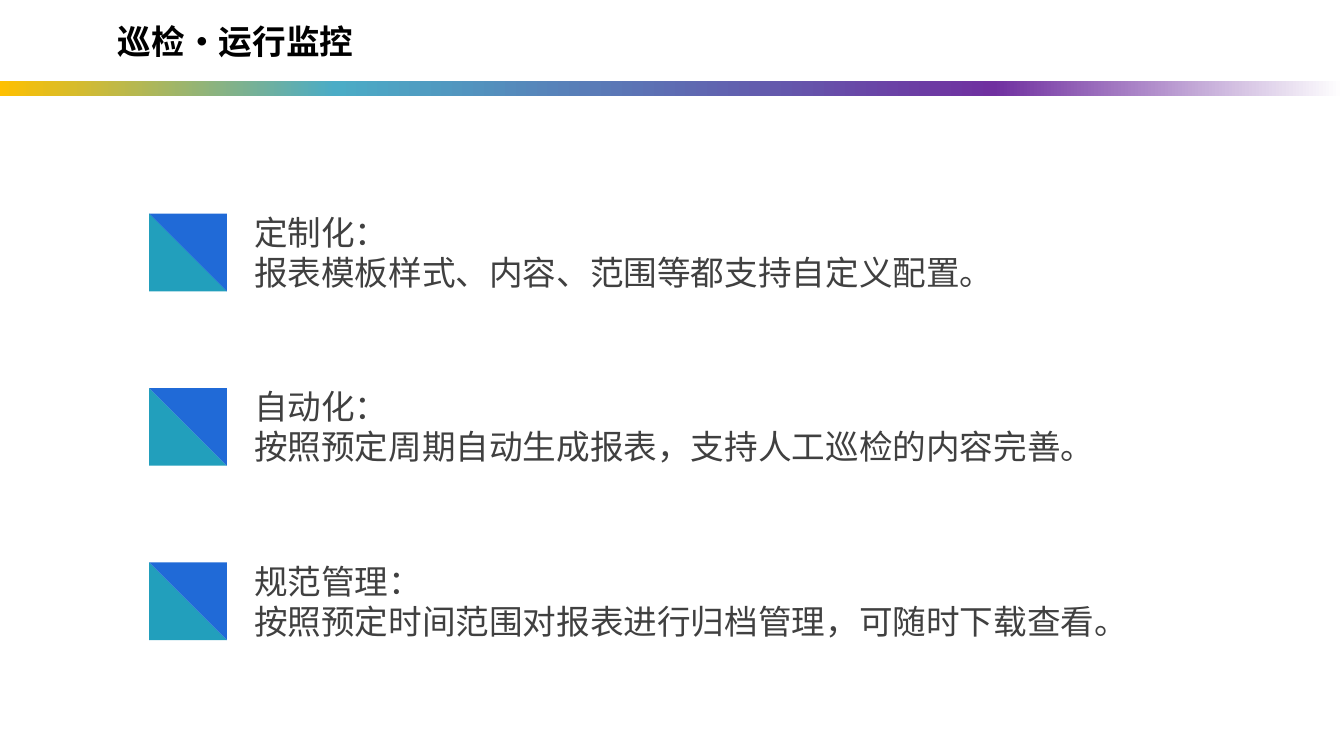
import pptx
import pptx.util
import pptx.dml.color
import pptx.enum.shapes
import pptx.enum.text
import pptx.oxml
import pptx.oxml.ns

Inches = pptx.util.Inches
RGBColor = pptx.dml.color.RGBColor
SHAPE = pptx.enum.shapes.MSO_SHAPE
ANCHOR = pptx.enum.text.MSO_ANCHOR

BLACK = RGBColor(0x00, 0x00, 0x00)
GREY = RGBColor(0x40, 0x40, 0x40)
TEAL = RGBColor(0x22, 0x9F, 0xBC)
BLUE = RGBColor(0x20, 0x6A, 0xD7)
GOLD = RGBColor(0xFF, 0xC0, 0x00)
AQUA = RGBColor(0x4B, 0xAC, 0xC6)
PURPLE = RGBColor(0x70, 0x30, 0xA0)
WHITE = RGBColor(0xFF, 0xFF, 0xFF)

BAR_STOPS = [(0, GOLD), (25, AQUA), (74, PURPLE), (100, WHITE)]
FEATURES = [
    ("定制化：", "报表模板样式、内容、范围等都支持自定义配置。"),
    ("自动化：", "按照预定周期自动生成报表，支持人工巡检的内容完善。"),
    ("规范管理：", "按照预定时间范围对报表进行归档管理，可随时下载查看。"),
]
FIRST_TOP = 2.12
PITCH = 1.73


class FeatureSlide:
    font = "Noto Sans CJK SC"
    size = pptx.util.Pt(24)

    def __init__(self, prs):
        self.slide = prs.slides.add_slide(prs.slide_layouts[5])

    def run(self, p, text, color, bold=False):
        r = p.add_run()
        r.text = text
        r.font.size = self.size
        r.font.bold = bold
        r.font.name = self.font
        r.font.color.rgb = color
        ea = pptx.oxml.parse_xml(
            f'<a:ea {pptx.oxml.ns.nsdecls("a")} typeface="{self.font}"/>')
        r.font._element.find(pptx.oxml.ns.qn("a:latin")).addnext(ea)

    def title(self, text):
        sp = self.slide.shapes.title
        sp.left, sp.top = Inches(1.07), Inches(0.16)
        sp.width, sp.height = Inches(9.62), Inches(0.5)
        tf = sp.text_frame
        tf.word_wrap = True
        tf.auto_size = pptx.enum.text.MSO_AUTO_SIZE.SHAPE_TO_FIT_TEXT
        tf.vertical_anchor = ANCHOR.TOP
        p = tf.paragraphs[0]
        p.alignment = pptx.enum.text.PP_ALIGN.LEFT
        self.run(p, text, BLACK, bold=True)

    def shape(self, shapes, kind, left, top, width, height):
        sp = shapes.add_shape(kind, Inches(left), Inches(top),
                              Inches(width), Inches(height))
        sp.shadow.inherit = False
        sp.line.fill.background()
        return sp

    def bar(self, stops):
        sp = self.shape(self.slide.shapes, SHAPE.RECTANGLE, -0.01, 0.8, 13.33, 0.15)
        sp.fill.gradient()
        sp.fill.gradient_angle = 0
        gs_list = sp._element.spPr.find(".//" + pptx.oxml.ns.qn("a:gsLst"))
        for gs in list(gs_list):
            gs_list.remove(gs)
        for percent, color in stops:
            gs_list.append(pptx.oxml.parse_xml(
                f'<a:gs {pptx.oxml.ns.nsdecls("a")} pos="{percent * 1000}">'
                f'<a:srgbClr val="{color}"/></a:gs>'))

    def feature(self, top, lines):
        shapes = self.slide.shapes.add_group_shape().shapes
        for color, angle in ((TEAL, 0), (BLUE, 180)):
            sp = self.shape(shapes, SHAPE.RIGHT_TRIANGLE, 1.48, top, 0.77, 0.77)
            sp.fill.solid()
            sp.fill.fore_color.rgb = color
            sp.rotation = angle
        box = shapes.add_textbox(Inches(2.39), Inches(top - 0.1),
                                 Inches(8.97), Inches(0.96))
        tf = box.text_frame
        tf.word_wrap = True
        tf.vertical_anchor = ANCHOR.MIDDLE
        tf.margin_left = tf.margin_right = Inches(0.13)
        tf.margin_top = tf.margin_bottom = Inches(0.07)
        for i, text in enumerate(lines):
            p = tf.add_paragraph() if i else tf.paragraphs[0]
            self.run(p, text, GREY)


def main():
    prs = pptx.Presentation()
    prs.slide_width, prs.slide_height = Inches(13.33), Inches(7.5)
    s = FeatureSlide(prs)
    s.bar(BAR_STOPS)
    s.title("巡检·运行监控")
    for i, lines in enumerate(FEATURES):
        s.feature(FIRST_TOP + i * PITCH, lines)
    prs.save("out.pptx")


if __name__ == "__main__":
    main()
